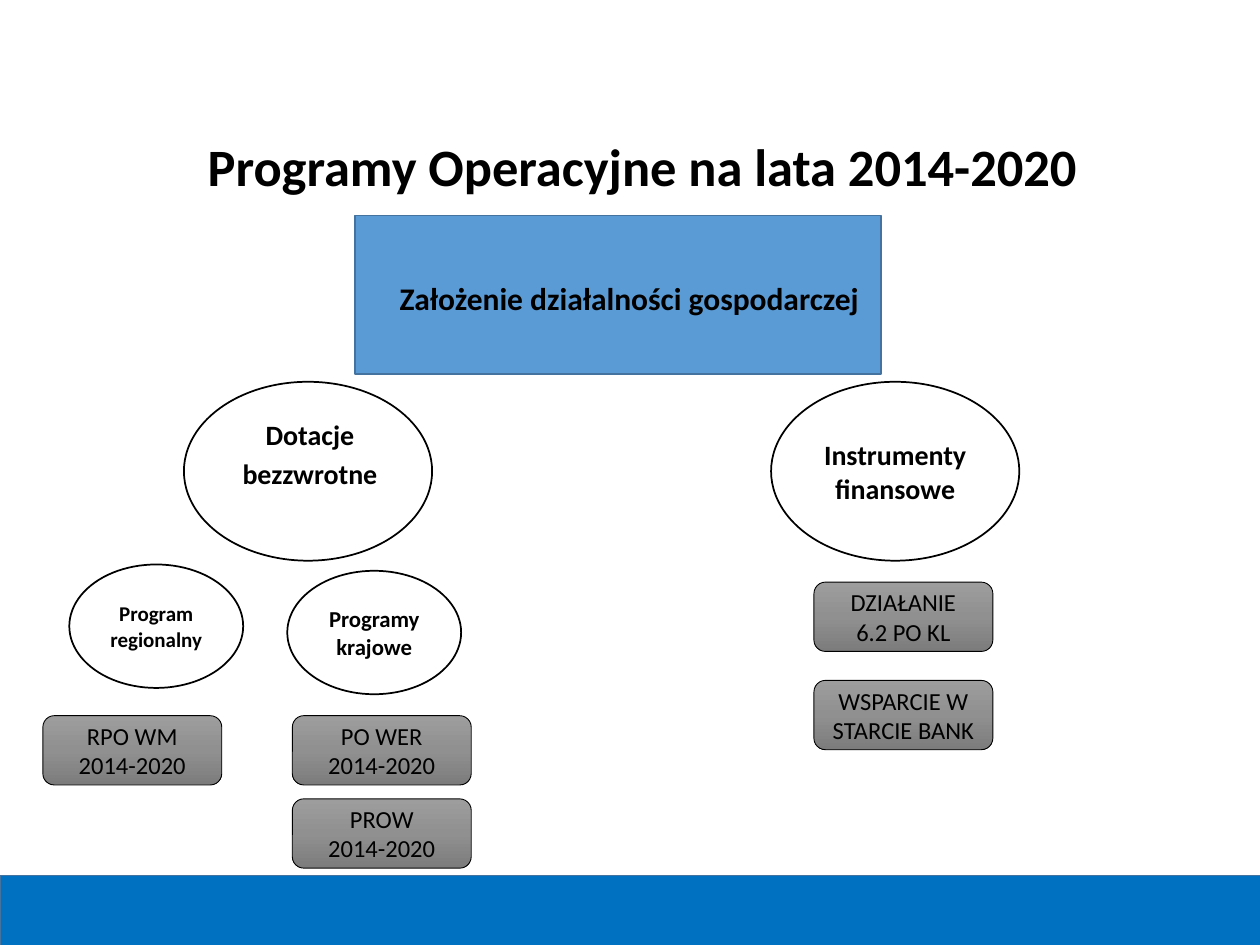
from copy import deepcopy

from pptx import Presentation
from pptx.dml.color import RGBColor
from pptx.enum.shapes import MSO_SHAPE as SHAPE
from pptx.enum.text import MSO_ANCHOR as ANCHOR, PP_ALIGN as ALIGN
from pptx.oxml.ns import qn
from pptx.util import Inches, Pt

# Content
TITLE = "Programy Operacyjne na lata 2014-2020"
GOAL = ["Założenie działalności gospodarczej"]
GRANTS = ["Dotacje", "bezzwrotne"]
INSTRUMENTS = ["Instrumenty finansowe"]

# Programme groups: label, left, top, text size
GROUPS = [
    (["Program regionalny"], 0.55, 4.48, 12),
    (["Programy krajowe"], 2.28, 4.53, 13),
]
# Columns of programmes: left, top of the first, step down, texts
COLUMNS = [
    (0.34, 5.68, 0.66, [["RPO WM 2014-2020"]]),
    (2.32, 5.68, 0.66, [["PO WER", "2014-2020"], ["PROW", "2014-2020"]]),
    (6.46, 4.62, 0.78, [["DZIAŁANIE", "6.2 PO KL"], ["WSPARCIE W STARCIE BANK"]]),
]

# Style
FONT, BLACK, WHITE = "Calibri", "000000", "FFFFFF"
BAR_BLUE, GOAL_BLUE, EDGE_BLUE = "0070C0", "5B9BD5", "43739E"
GREYS = [(0, "9D9D9D"), (0.5, "909090"), (1, "7C7C7C")]
BRANCH_SIZE, GROUP_SIZE, PROGRAMME_SIZE = (1.97, 1.42), (1.38, 0.98), (1.42, 0.55)


def rgb(code):
    return RGBColor.from_string(code)


def write(frame, lines, size, bold=True, gap=0, anchor=ANCHOR.MIDDLE):
    frame.word_wrap = True
    frame.vertical_anchor = anchor
    for i, line in enumerate(lines):
        paragraph = frame.paragraphs[0] if i == 0 else frame.add_paragraph()
        paragraph.alignment = ALIGN.CENTER
        paragraph.space_before = Pt(gap if i else 0)
        run = paragraph.add_run()
        run.text = line
        run.font.name, run.font.size, run.font.bold = FONT, Pt(size), bold
        run.font.color.rgb = rgb(BLACK)


def add_label(box, lines, size, gap=0):
    label = slide.shapes.add_textbox(*map(Inches, box))
    write(label.text_frame, lines, size, gap=gap)


def add_figure(kind, box, fill, edge, weight):
    figure = slide.shapes.add_shape(kind, *map(Inches, box))
    figure.shadow.inherit = False
    if isinstance(fill, str):
        figure.fill.solid()
        figure.fill.fore_color.rgb = rgb(fill)
    else:
        shade(figure, fill)
    figure.line.color.rgb = rgb(edge)
    figure.line.width = Pt(weight)
    return figure


def shade(figure, colours):
    """Vertical gradient; the default one has two stops, so a third is added."""
    figure.fill.gradient()
    figure.fill.gradient_angle = 270
    stop_list = figure.element.spPr.find(".//" + qn("a:gsLst"))
    stop_list.insert(1, deepcopy(stop_list[0]))
    for stop, (position, colour) in zip(figure.fill.gradient_stops, colours):
        stop.position = position
        stop.color.rgb = rgb(colour)


def add_oval(left, top, size):
    return add_figure(SHAPE.OVAL, (left, top, *size), WHITE, BLACK, 1)


prs = Presentation()
prs.slide_width, prs.slide_height = Inches(10), Inches(7.5)
slide = prs.slides.add_slide(prs.slide_layouts[5])

# Title
title = slide.shapes.title
title.left, title.top, title.width, title.height = map(Inches, (0.2, 1.07, 9.8, 0.71))
write(title.text_frame, [TITLE], 30, anchor=ANCHOR.TOP)
title.text_frame.paragraphs[0].line_spacing = 0.9

# Bottom bar and goal
add_figure(SHAPE.RECTANGLE, (0, 6.95, 10, 0.55), BAR_BLUE, EDGE_BLUE, 0.25)
add_figure(SHAPE.RECTANGLE, (2.82, 1.71, 4.17, 1.26), GOAL_BLUE, EDGE_BLUE, 1)
add_label((2.82, 1.86, 4.35, 1.01), GOAL, 18)

# Two branches
add_oval(1.46, 3.03, BRANCH_SIZE)
add_label((0.9, 2.97, 3.12, 1.26), GRANTS, 16, gap=3.2)
instruments = add_oval(6.12, 3.03, BRANCH_SIZE)
write(instruments.text_frame, INSTRUMENTS, 16)

# Programmes
for left, top, step, programmes in COLUMNS:
    for row, lines in enumerate(programmes):
        box = (left, top + row * step, *PROGRAMME_SIZE)
        programme = add_figure(SHAPE.ROUNDED_RECTANGLE, box, GREYS, BLACK, 0.5)
        write(programme.text_frame, lines, 14, bold=False)

# Programme groups
for lines, left, top, size in GROUPS:
    write(add_oval(left, top, GROUP_SIZE).text_frame, lines, size)

prs.save("out.pptx")
